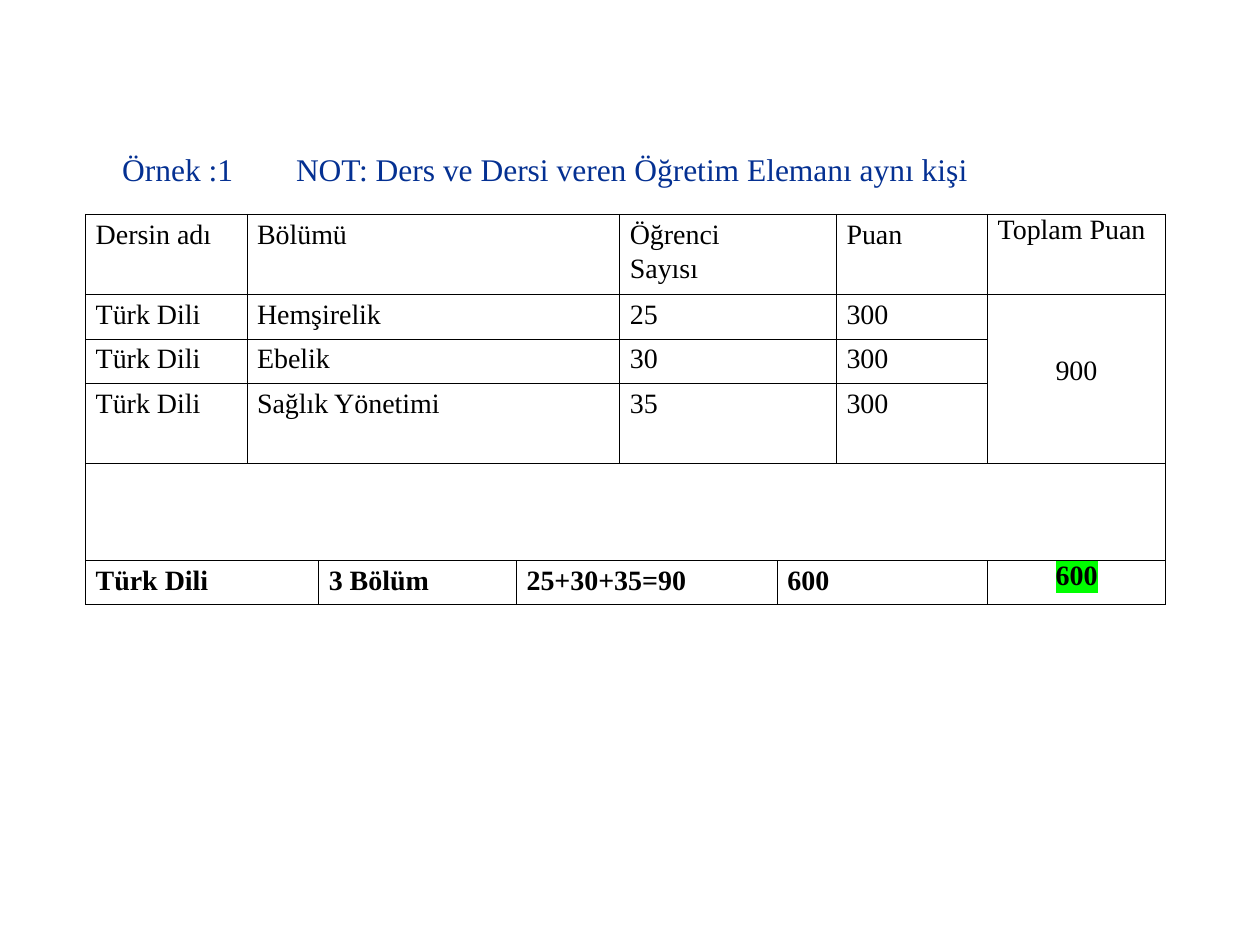
from lxml import etree
from pptx import Presentation
from pptx.dml.color import RGBColor
from pptx.enum.text import PP_ALIGN
from pptx.oxml.ns import qn
from pptx.util import Inches, Pt

CENTER = PP_ALIGN.CENTER
THEME = {
    "font": "Times New Roman",
    "ink": "000000",
    "title": "043092",
    "mark": "00FF00",
    "title size": 18,
    "cell size": 16,
    "line": 0.5,
}
NO_STYLE = "{2D5ABB26-0587-4C30-8999-92F81FD0307C}"
COLS = [1.28, 0.57, 1.57, 0.82, 1.25, 0.47, 1.2, 0.54, 0.34, 0.53]
ROWS = [0.64, 0.35, 0.35, 0.64, 0.77, 0.26, 0.09]


def style(para, size, color, bold=False):
    font = para.font
    font.name, font.size, font.bold = THEME["font"], Pt(size), bold
    font.color.rgb = RGBColor.from_string(color)


def border(cell, sides):
    """Draw the named sides (L, R, T, B) and switch the others off."""
    props = cell._tc.get_or_add_tcPr()
    for spot, side in enumerate("LRTB"):
        line = etree.Element(qn("a:ln" + side), w=str(Pt(THEME["line"])))
        if side in sides:
            fill = etree.SubElement(line, qn("a:solidFill"))
            etree.SubElement(fill, qn("a:srgbClr"), val=THEME["ink"])
        else:
            etree.SubElement(line, qn("a:noFill"))
        props.insert(spot, line)


deck = Presentation()
deck.slide_width, deck.slide_height = Inches(10), Inches(7.5)
slide = deck.slides.add_slide(deck.slide_layouts[6])

# Title, with a tab between the label and the note
box = slide.shapes.add_textbox(Inches(0.96), Inches(1.18), Inches(7.24), Inches(0.32))
frame = box.text_frame
frame.word_wrap = True
frame.margin_left = frame.margin_top = Inches(0.01)
frame.margin_right = frame.margin_bottom = 0
para = frame.paragraphs[0]
para.text = "Örnek :1\tNOT: Ders ve Dersi veren Öğretim Elemanı aynı kişi"
tabs = etree.SubElement(para._p.get_or_add_pPr(), qn("a:tabLst"))
etree.SubElement(tabs, qn("a:tab"), pos=str(Inches(1.38)), algn="l")
style(para, THEME["title size"], THEME["title"])

# Table grid
holder = slide.shapes.add_table(
    len(ROWS), len(COLS), Inches(0.68), Inches(1.7), Inches(sum(COLS)), Inches(sum(ROWS))
)
table = holder.table
table.first_row = table.horz_banding = False
table._tbl.tblPr.find(qn("a:tableStyleId")).text = NO_STYLE
for col, width in zip(table.columns, COLS):
    col.width = Inches(width)
for row, height in zip(table.rows, ROWS):
    row.height = Inches(height)

# Words by row and column
words = {
    (0, 7): "Toplam Puan",
    (1, 7): "900",
    (5, 0): "Türk Dili",
    (5, 2): "3 Bölüm",
    (5, 3): "25+30+35=90",
    (5, 5): "600",
    (5, 8): "600",
}
upper = [
    ("Dersin adı", "Bölümü", "Öğrenci Sayısı", "Puan"),
    ("Türk Dili", "Hemşirelik", "25", "300"),
    ("Türk Dili", "Ebelik", "30", "300"),
    ("Türk Dili", "Sağlık Yönetimi", "35", "300"),
]
for r, texts in enumerate(upper):
    words.update({(r, c): text for c, text in zip((0, 1, 4, 6), texts)})

# Rows and columns that each joined cell spans
spans = {
    (0, 7): (1, 3), (1, 7): (3, 3), (4, 0): (1, 10),
    (5, 0): (2, 2), (5, 2): (2, 1), (5, 3): (2, 2),
    (5, 5): (2, 2), (5, 7): (2, 1), (5, 9): (2, 1),
}
for r in range(len(upper)):
    spans.update({(r, 1): (1, 3), (r, 4): (1, 2)})
for (r, c), (down, across) in spans.items():
    table.cell(r, c).merge(table.cell(r + down - 1, c + across - 1))

sides = {(5, 7): "LTB", (5, 8): "T", (5, 9): "TRB", (6, 8): "B"}
for r in range(len(ROWS)):
    for c in range(len(COLS)):
        cell = table.cell(r, c)
        cell.margin_left = Inches(0.08)
        cell.margin_top = Inches(0.04)
        cell.margin_right = cell.margin_bottom = 0
        cell.fill.background()
        border(cell, sides.get((r, c), "LRTB"))
        para = cell.text_frame.paragraphs[0]
        if (r, c) in words:
            para.text = words[r, c]
            style(para, THEME["cell size"], THEME["ink"], r == 5)
        else:
            cell.margin_top = 0
            para._p.get_or_add_endParaRPr().set("sz", "100")

# Cells that differ from the rest
head = table.cell(0, 4)
head.margin_top, head.margin_right = Inches(0.02), Inches(0.6)
head.text_frame.paragraphs[0].line_spacing = 1.09

table.cell(0, 7).margin_top = 0
table.cell(0, 7).text_frame.paragraphs[0].line_spacing = Pt(18.1)

total = table.cell(1, 7)
total.margin_left, total.margin_top = 0, Inches(0.48)
total.text_frame.paragraphs[0].alignment = CENTER

mark = table.cell(5, 8)
mark.margin_left = mark.margin_top = 0
mark.text_frame.paragraphs[0].line_spacing = Pt(17.8)
mark.fill.solid()
mark.fill.fore_color.rgb = RGBColor.from_string(THEME["mark"])

deck.save("out.pptx")
